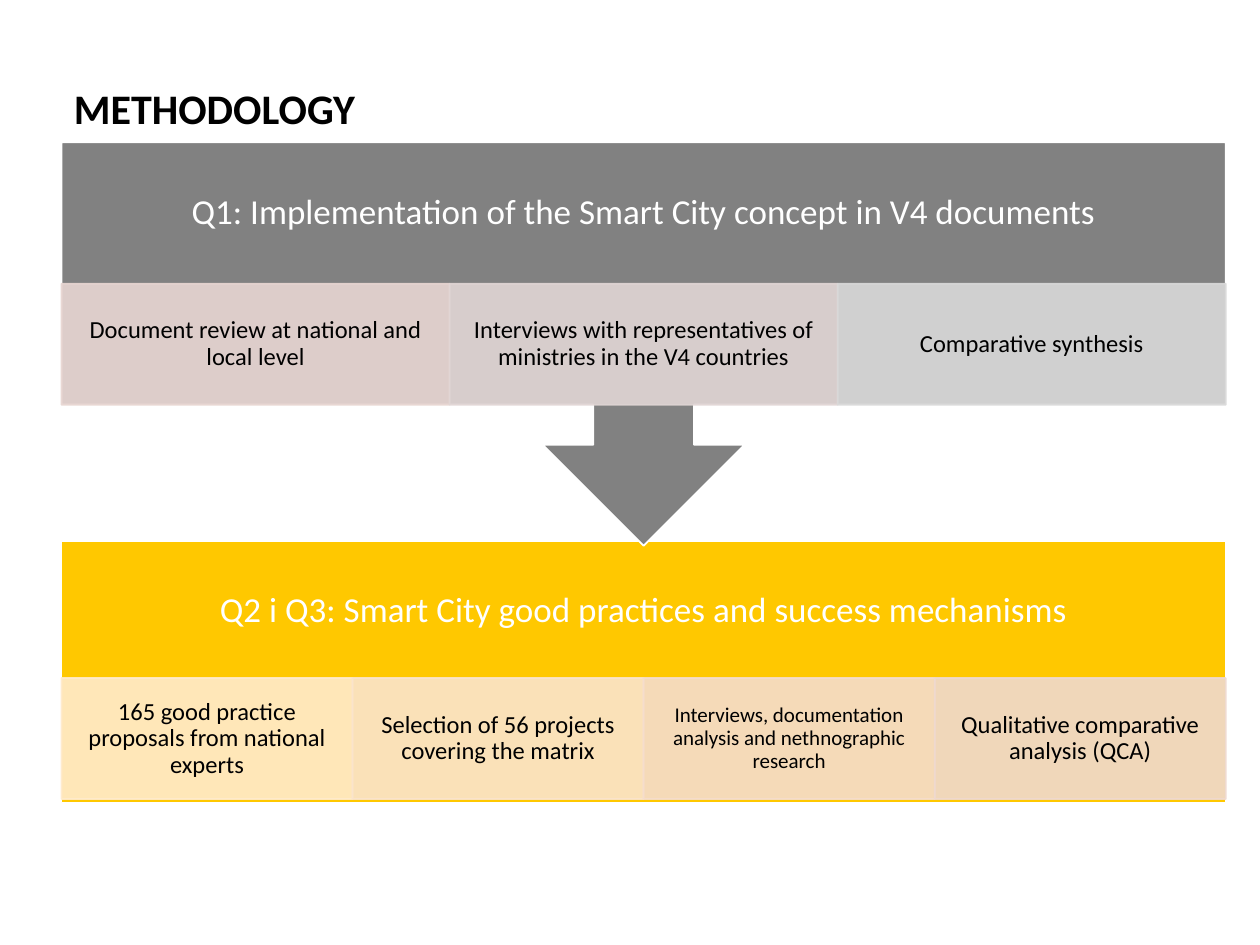
from lxml import etree
from pptx import Presentation
from pptx import util as u
from pptx.dml.color import RGBColor
from pptx.enum import shapes, text
from pptx.oxml.ns import qn

BLACK = RGBColor(0x00, 0x00, 0x00)
WHITE = RGBColor(0xFF, 0xFF, 0xFF)
GREY = RGBColor(0x81, 0x81, 0x81)
AMBER = RGBColor(0xFF, 0xC8, 0x00)
PALE_AMBER = RGBColor(0xFF, 0xEB, 0xCC)
PALE_APRICOT = RGBColor(0xFA, 0xE4, 0xCC)
PALE_PEACH = RGBColor(0xF5, 0xDD, 0xCD)
PALE_CLAY = RGBColor(0xEF, 0xD9, 0xCF)
PALE_ROSE = RGBColor(0xE8, 0xD6, 0xD2)
PALE_MAUVE = RGBColor(0xE1, 0xD6, 0xD5)
PALE_GREY = RGBColor(0xD9, 0xD9, 0xD9)

TITLE = "METHODOLOGY"
# Back to front: the arrow of Q1 lies over the Q2 block.
STAGES = [
    {
        "heading": "Q2 i Q3: Smart City good practices and success mechanisms",
        "outline": shapes.MSO_SHAPE.RECTANGLE, "rotation": 0, "color": AMBER,
        "top": 10.9, "height": 5.28, "steps_top": 13.67,
        "steps": [
            ("165 good practice proposals from national experts", 14, PALE_AMBER),
            ("Selection of 56 projects covering the matrix", 14, PALE_APRICOT),
            ("Interviews, documentation analysis and nethnographic research", 12, PALE_PEACH),
            ("Qualitative comparative analysis (QCA)", 14, PALE_CLAY),
        ],
    },
    {
        "heading": "Q1: Implementation of the Smart City concept in V4 documents",
        "outline": shapes.MSO_SHAPE.UP_ARROW_CALLOUT, "rotation": 180, "color": GREY,
        "top": 2.87, "height": 8.13, "steps_top": 5.72,
        "steps": [
            ("Document review at national and local level", 14, PALE_ROSE),
            ("Interviews with representatives of ministries in the V4 countries", 14, PALE_MAUVE),
            ("Comparative synthesis", 14, PALE_GREY),
        ],
    },
]

LEFT, WIDTH = 1.24, 23.47
HEADING_HEIGHT, STEP_HEIGHT = 2.84, 2.44
STEP_OPACITY = 90


def box(left, top, width, height):
    return [u.Cm(length) for length in (left, top, width, height)]


def write(frame, words, font, paragraph_format, margins, anchor):
    frame.word_wrap = True
    frame.vertical_anchor = anchor
    across, down = margins
    frame.margin_left = frame.margin_right = u.Cm(across)
    frame.margin_top = frame.margin_bottom = u.Cm(down)
    paragraph = frame.paragraphs[0]
    paragraph.text = words
    for name, value in paragraph_format.items():
        setattr(paragraph, name, value)
    color, *_ = [font["color"]]
    paragraph.font.color.rgb = color
    for name in ("size", "bold"):
        setattr(paragraph.font, name, font[name])
    paragraph.font.name = "Calibri"


def write_centred(frame, words, size, color, margins):
    write(frame, words, {"size": u.Pt(size), "bold": False, "color": color},
          {"alignment": text.PP_ALIGN.CENTER, "line_spacing": 0.9},
          margins, text.MSO_ANCHOR.MIDDLE)


def add_panel(slide, outline, place, fill, line):
    panel = slide.shapes.add_shape(outline, *place)
    panel.shadow.inherit = False
    panel.fill.solid()
    panel.fill.fore_color.rgb = fill
    panel.line.color.rgb = line
    panel.line.width = u.Pt(1)
    return panel


def set_opacity(panel, percent):
    """Apply the opacity to both the fill and the line."""
    for color in panel.fill._xPr.iter(qn("a:srgbClr")):
        etree.SubElement(color, qn("a:alpha"), val=str(percent * 1000))


def add_stage(slide, stage):
    block = add_panel(slide, stage["outline"],
                      box(LEFT, stage["top"], WIDTH, stage["height"]),
                      stage["color"], WHITE)
    block.rotation = stage["rotation"]
    heading = slide.shapes.add_textbox(*box(LEFT, stage["top"], WIDTH, HEADING_HEIGHT))
    write_centred(heading.text_frame, stage["heading"], 20, WHITE, (0.41, 0.41))

    step_width = WIDTH / len(stage["steps"])
    for column, (words, size, color) in enumerate(stage["steps"]):
        place = box(LEFT + column * step_width, stage["steps_top"], step_width, STEP_HEIGHT)
        step = add_panel(slide, shapes.MSO_SHAPE.RECTANGLE, place, color, color)
        set_opacity(step, STEP_OPACITY)
        write_centred(step.text_frame, words, size, BLACK, (size * 0.02, 0.05))


def main():
    deck = Presentation()
    deck.slide_width, deck.slide_height = u.Cm(25.4), u.Cm(19.05)
    slide = deck.slides.add_slide(deck.slide_layouts[6])
    title = slide.shapes.add_textbox(*box(LEFT, 1.4, WIDTH, 1.3))
    write(title.text_frame, TITLE, {"size": u.Pt(24), "bold": True, "color": BLACK},
          {"line_spacing": 1.13}, (0.25, 0.13), text.MSO_ANCHOR.TOP)
    for stage in STAGES:
        add_stage(slide, stage)
    deck.save("out.pptx")


if __name__ == "__main__":
    main()
